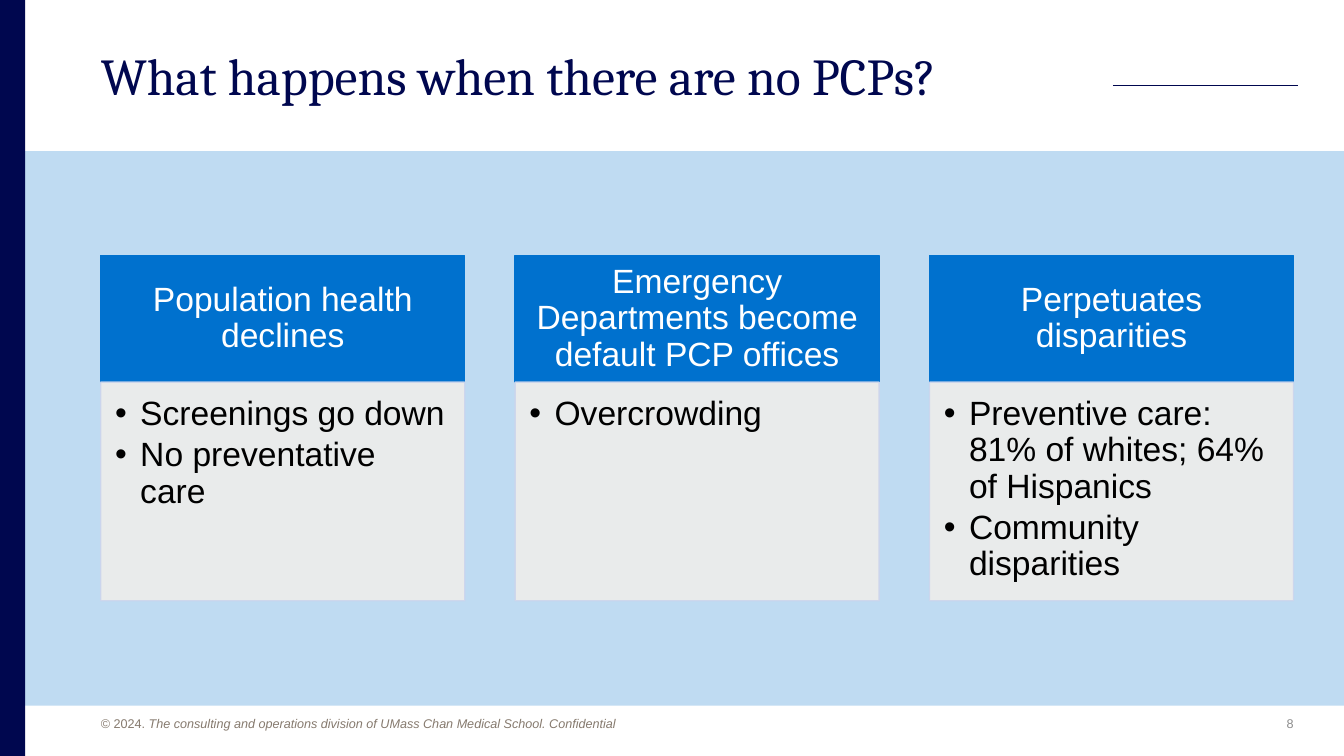
"""Slide on what follows when primary care is missing."""
from dataclasses import dataclass

from lxml.etree import SubElement
from pptx import Presentation
from pptx.dml.color import RGBColor as Rgb
from pptx.enum.shapes import MSO_CONNECTOR as Line, MSO_SHAPE as Kind
from pptx.enum.text import MSO_ANCHOR as Anchor, MSO_AUTO_SIZE as Fit, PP_ALIGN as Align
from pptx.oxml.ns import qn
from pptx.util import Pt


@dataclass(frozen=True)
class Theme:
    """Colours, fonts and type sizes of the slide."""
    navy: str = "00074F"
    blue: str = "0071CE"
    pale: str = "EEEDEB"
    edge: str = "CCD5ED"
    white: str = "FFFFFF"
    black: str = "000000"
    brown: str = "867A6E"
    grey: str = "8C8C8C"
    serif: str = "Cambria"
    sans: str = "Arial"
    head: int = 37
    text: int = 24
    note: int = 9


THEME = Theme()
CARDS = [
    ("Population health declines", ["Screenings go down", "No preventative care"]),
    ("Emergency Departments become default PCP offices", ["Overcrowding"]),
    ("Perpetuates disparities",
     ["Preventive care: 81% of whites; 64% of Hispanics", "Community disparities"]),
]


def fade(color, pct):
    """Set the opacity of a solid fill or line colour."""
    for node in color.iter(qn("a:srgbClr")):
        SubElement(node, qn("a:alpha")).set("val", str(pct * 1000))


def add_rect(slide, box, fill, edge=None, pct=100):
    """Add a flat rectangle with an optional edge and opacity."""
    rect = slide.shapes.add_shape(Kind.RECTANGLE, *map(Pt, box))
    rect.shadow.inherit = False
    rect.fill.solid()
    rect.fill.fore_color.rgb = Rgb.from_string(fill)
    if edge:
        rect.line.color.rgb = Rgb.from_string(edge)
        rect.line.width = Pt(1)
    else:
        rect.line.fill.background()
    if pct < 100:
        fade(rect.element.spPr, pct)
    return rect


def set_frame(shape, anchor, pads=(0, 0, 0, 0)):
    """Set wrapping, anchor and insets, and return the text frame."""
    frame = shape.text_frame
    frame.word_wrap = True
    frame.auto_size = Fit.NONE
    frame.vertical_anchor = anchor
    (frame.margin_left, frame.margin_top,
     frame.margin_right, frame.margin_bottom) = map(Pt, pads)
    return frame


def add_run(para, text, size, color, face=THEME.sans, slant=None):
    """Add one formatted run to a paragraph."""
    run = para.add_run()
    run.text = text
    font = run.font
    font.size, font.name, font.italic = Pt(size), face, slant
    font.color.rgb = Rgb.from_string(color)


def set_para(para, align=Align.LEFT, pitch=0.9, after=0):
    """Set the alignment and spacing of a paragraph."""
    para.alignment = align
    para.line_spacing = pitch
    para.space_before = Pt(0)
    para.space_after = Pt(after)


def add_dot(para, indent):
    """Give a paragraph a hanging round bullet."""
    props = para._p.get_or_add_pPr()
    props.set("marL", str(Pt(indent)))
    props.set("indent", str(-Pt(indent)))
    SubElement(props, qn("a:buFont")).set("typeface", THEME.sans)
    SubElement(props, qn("a:buChar")).set("char", "•")


def draw_back(slide, box):
    """Draw the tinted band and the side bar."""
    left, top, width, height = box
    add_rect(slide, (left, top + 108, width, height - 144), THEME.blue, pct=25)
    add_rect(slide, (left, top, 18, height), THEME.navy)


def draw_title(slide, box):
    """Place the title and the thin rule to its right."""
    left, top, width, height = box
    title = slide.shapes.title
    title.left, title.top, title.width, title.height = map(Pt, (left, top, 720, height))
    para = set_frame(title, Anchor.TOP).paragraphs[0]
    set_para(para)
    add_run(para, "What happens when there are no PCPs?",
            THEME.head, THEME.navy, THEME.serif)
    end, mid = left + width, top + 25.2
    rule = slide.shapes.add_connector(
        Line.STRAIGHT, Pt(end - 132.4), Pt(mid), Pt(end), Pt(mid))
    rule.line.color.rgb = Rgb.from_string(THEME.navy)
    rule.line.width = Pt(0.5)
    SubElement(rule.element.spPr, qn("a:effectLst"))


def draw_card(slide, box, head, items):
    """Draw a header block above its bulleted panel."""
    left, top, width, height = box
    cap = 90.4
    block = add_rect(slide, (left, top, width, cap), THEME.blue, THEME.blue)
    para = set_frame(block, Anchor.MIDDLE, (13.7, 7.9, 13.7, 7.9)).paragraphs[0]
    set_para(para, Align.CENTER)
    add_run(para, head, THEME.text, THEME.white)
    panel = add_rect(slide, (left, top + cap, width, height - cap),
                     THEME.pale, THEME.edge, 90)
    frame = set_frame(panel, Anchor.TOP, (10.2, 10.2, 13.7, 15.4))
    for num, item in enumerate(items):
        para = frame.add_paragraph() if num else frame.paragraphs[0]
        set_para(para, after=3.6)
        add_dot(para, 18)
        add_run(para, item, THEME.text, THEME.black)


def draw_cards(slide, box):
    """Spread the cards evenly over the box."""
    left, top, width, height = box
    wide = 260
    step = (width - wide) / (len(CARDS) - 1)
    for num, (head, items) in enumerate(CARDS):
        draw_card(slide, (left + num * step, top, wide, height), head, items)


def draw_foot(slide, box):
    """Place the copyright line and the page number."""
    left, top, width, height = box
    note = slide.shapes.add_textbox(*map(Pt, (left, top, 408, height)))
    para = set_frame(note, Anchor.BOTTOM).paragraphs[0]
    set_para(para, pitch=1.5)
    add_run(para, "© 2024. ", THEME.note, THEME.brown)
    add_run(para, "The consulting and operations division of UMass Chan Medical School. "
            "Confidential", THEME.note, THEME.brown, slant=True)
    page = slide.shapes.add_textbox(*map(Pt, (left + width - 36, top, 36, height)))
    para = set_frame(page, Anchor.BOTTOM).paragraphs[0]
    set_para(para, Align.RIGHT, 1)
    add_run(para, "8", THEME.note, THEME.grey)


def main():
    """Build the slide and save it."""
    deck = Presentation()
    deck.slide_width, deck.slide_height = Pt(960), Pt(540)
    slide = deck.slides.add_slide(deck.slide_layouts[5])
    draw_back(slide, (0, 0, 960, 540))
    draw_title(slide, (72, 36, 855.4, 52.6))
    draw_cards(slide, (72, 182.6, 852, 246.6))
    draw_foot(slide, (72, 504, 852, 18))
    deck.save("out.pptx")


if __name__ == "__main__":
    main()
